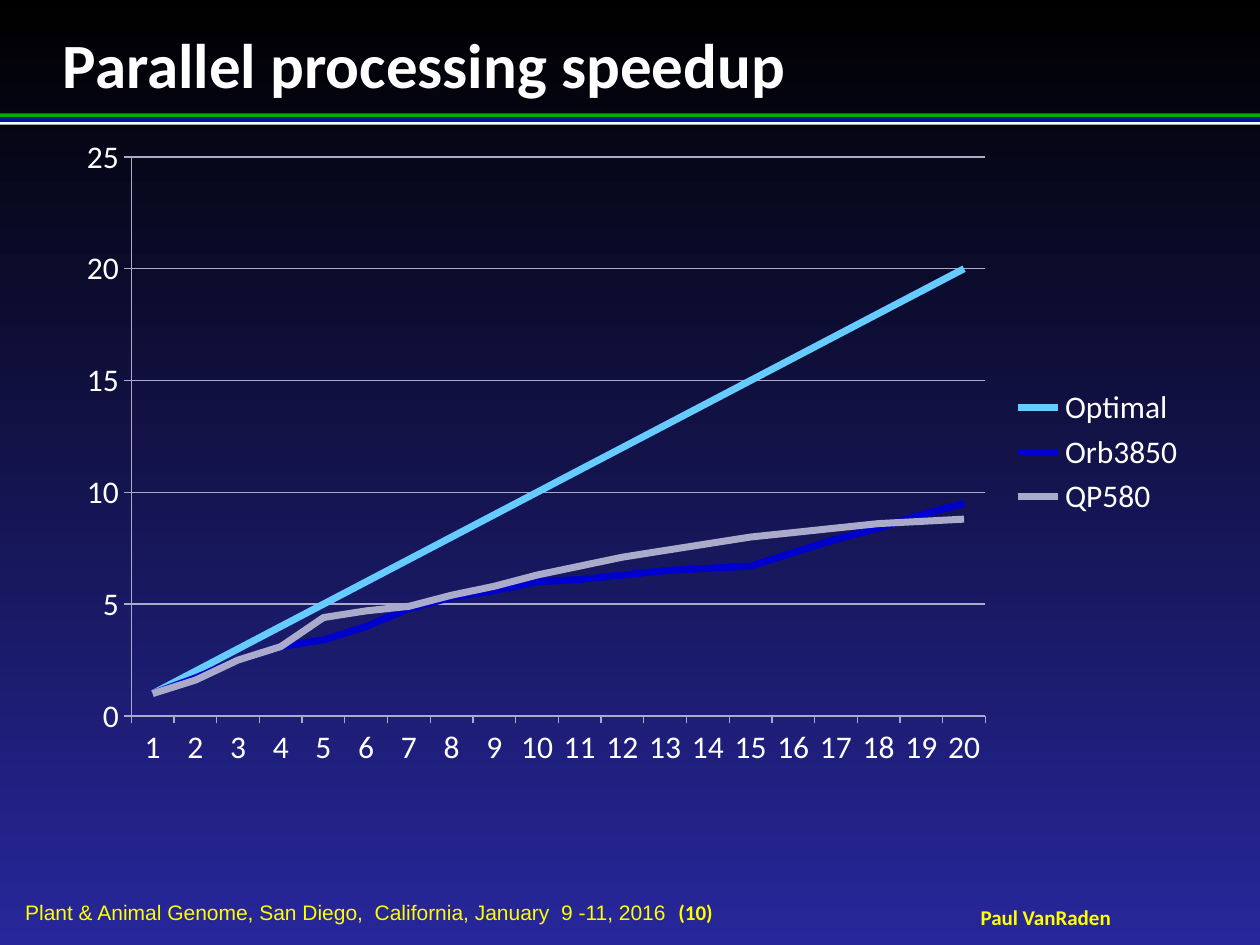
from typing import NamedTuple

from pptx import Presentation
from pptx.chart.data import CategoryChartData
from pptx.dml.color import RGBColor
from pptx.enum.chart import XL_CHART_TYPE, XL_LEGEND_POSITION, XL_MARKER_STYLE, XL_TICK_MARK
from pptx.enum.shapes import MSO_SHAPE
from pptx.enum.text import MSO_ANCHOR, PP_ALIGN
from pptx.util import Inches, Pt

BLACK = RGBColor(0x00, 0x00, 0x00)
NAVY = RGBColor(0x27, 0x27, 0x9B)
WHITE = RGBColor(0xFF, 0xFF, 0xFF)
YELLOW = RGBColor(0xFF, 0xFF, 0x00)
GREEN = RGBColor(0x01, 0xAF, 0x00)
BLUE = RGBColor(0x00, 0x17, 0x99)
SKY = RGBColor(0x66, 0xCC, 0xFF)
ROYAL = RGBColor(0x00, 0x00, 0xCC)
LAVENDER = RGBColor(0xAA, 0xAA, 0xCA)

WIDTH, HEIGHT = Inches(10), Inches(7.5)


class Box(NamedTuple):
    """A place on the slide, as shares of its width and height."""
    left: float
    top: float
    width: float
    height: float

    def emu(self) -> tuple[int, int, int, int]:
        return (int(self.left * WIDTH), int(self.top * HEIGHT),
                int(self.width * WIDTH), int(self.height * HEIGHT))


class Run(NamedTuple):
    text: str
    size: int
    color: RGBColor
    font: str = "Calibri"
    bold: bool = True


class Label(NamedTuple):
    box: Box
    runs: list[Run]
    anchor: MSO_ANCHOR = MSO_ANCHOR.MIDDLE
    align: PP_ALIGN = PP_ALIGN.LEFT
    wrap: bool = True


class Stripe(NamedTuple):
    top: float
    height: float
    color: RGBColor


class Curve(NamedTuple):
    name: str
    values: list[float]
    color: RGBColor


STRIPES = [
    Stripe(0.12, 0.004, GREEN),
    Stripe(0.128, 0.004, WHITE),
    Stripe(0.124, 0.005, BLUE),
]

LABELS = [
    Label(Box(0.77, 0.957, 0.12, 0.027), [Run("Paul VanRaden", 12, YELLOW)],
          align=PP_ALIGN.CENTER, wrap=False),
    Label(Box(0.02, 0.952, 0.68, 0.027), [
        Run("Plant & Animal Genome, San Diego,  California, January  9 -11, 2016  ",
            12, YELLOW, "Arial", False),
        Run("(10)", 12, YELLOW)]),
    Label(Box(0.05, 0.027, 0.9, 0.08), [Run("Parallel processing speedup", 36, WHITE)],
          anchor=MSO_ANCHOR.TOP),
]

PROCESSORS = range(1, 21)
CURVES = [
    Curve("Optimal", list(PROCESSORS), SKY),
    Curve("Orb3850", [1, 1.7, 2.5, 3.1, 3.4, 4, 4.8, 5.3, 5.6, 6,
                      6.1, 6.3, 6.5, 6.6, 6.7, 7.3, 7.9, 8.4, 9, 9.5], ROYAL),
    Curve("QP580", [1, 1.6, 2.5, 3.1, 4.4, 4.7, 4.9, 5.4, 5.8, 6.3,
                    6.7, 7.1, 7.4, 7.7, 8, 8.2, 8.4, 8.6, 8.7, 8.8], LAVENDER),
]


def paint_background(s) -> None:
    fill = s.background.fill
    fill.gradient()
    fill.gradient_angle = 270
    for stop, color in zip(fill.gradient_stops, (BLACK, NAVY)):
        stop.color.rgb = color


def add_stripe(s, stripe: Stripe) -> None:
    sp = s.shapes.add_shape(MSO_SHAPE.RECTANGLE, *Box(0, stripe.top, 1, stripe.height).emu())
    sp.shadow.inherit = False
    sp.fill.solid()
    sp.fill.fore_color.rgb = stripe.color
    sp.line.fill.background()


def add_label(s, label: Label) -> None:
    tf = s.shapes.add_textbox(*label.box.emu()).text_frame
    tf.margin_left = tf.margin_right = tf.margin_top = tf.margin_bottom = 0
    tf.word_wrap = label.wrap
    tf.vertical_anchor = label.anchor
    p = tf.paragraphs[0]
    p.alignment = label.align
    for run in label.runs:
        r = p.add_run()
        r.text = run.text
        r.font.name, r.font.size, r.font.bold = run.font, Pt(run.size), run.bold
        r.font.color.rgb = run.color


def style_line(line, color: RGBColor, width: float) -> None:
    line.color.rgb = color
    line.width = Pt(width)


def add_speedup_chart(s, box: Box, curves: list[Curve]) -> None:
    data = CategoryChartData()
    data.categories = [str(n) for n in PROCESSORS]
    for curve in curves:
        data.add_series(curve.name, curve.values)
    chart = s.shapes.add_chart(XL_CHART_TYPE.LINE, *box.emu(), data).chart
    chart.has_title = False
    chart.font.name, chart.font.size = "Calibri", Pt(18)
    chart.font.color.rgb = WHITE
    chart.has_legend = True
    chart.legend.position = XL_LEGEND_POSITION.RIGHT
    chart.legend.include_in_layout = False

    # Axes and gridlines
    for axis in (chart.category_axis, chart.value_axis):
        axis.major_tick_mark = XL_TICK_MARK.OUTSIDE
        axis.minor_tick_mark = XL_TICK_MARK.NONE
        style_line(axis.format.line, LAVENDER, 0.75)
    values = chart.value_axis
    values.minimum_scale, values.maximum_scale, values.major_unit = 0, 25, 5
    values.has_major_gridlines = True
    style_line(values.major_gridlines.format.line, LAVENDER, 0.75)

    # Curves
    plot = chart.plots[0]
    plot.vary_by_categories = False
    for series, curve in zip(plot.series, curves):
        series.smooth = False
        series.marker.style = XL_MARKER_STYLE.NONE
        style_line(series.format.line, curve.color, 4)


def main() -> None:
    prs = Presentation()
    prs.slide_width, prs.slide_height = WIDTH, HEIGHT
    s = prs.slides.add_slide(prs.slide_layouts[6])
    paint_background(s)
    for stripe in STRIPES:
        add_stripe(s, stripe)
    for label in LABELS:
        add_label(s, label)
    add_speedup_chart(s, Box(0.051, 0.132, 0.9, 0.693), CURVES)
    prs.save("out.pptx")


if __name__ == "__main__":
    main()
